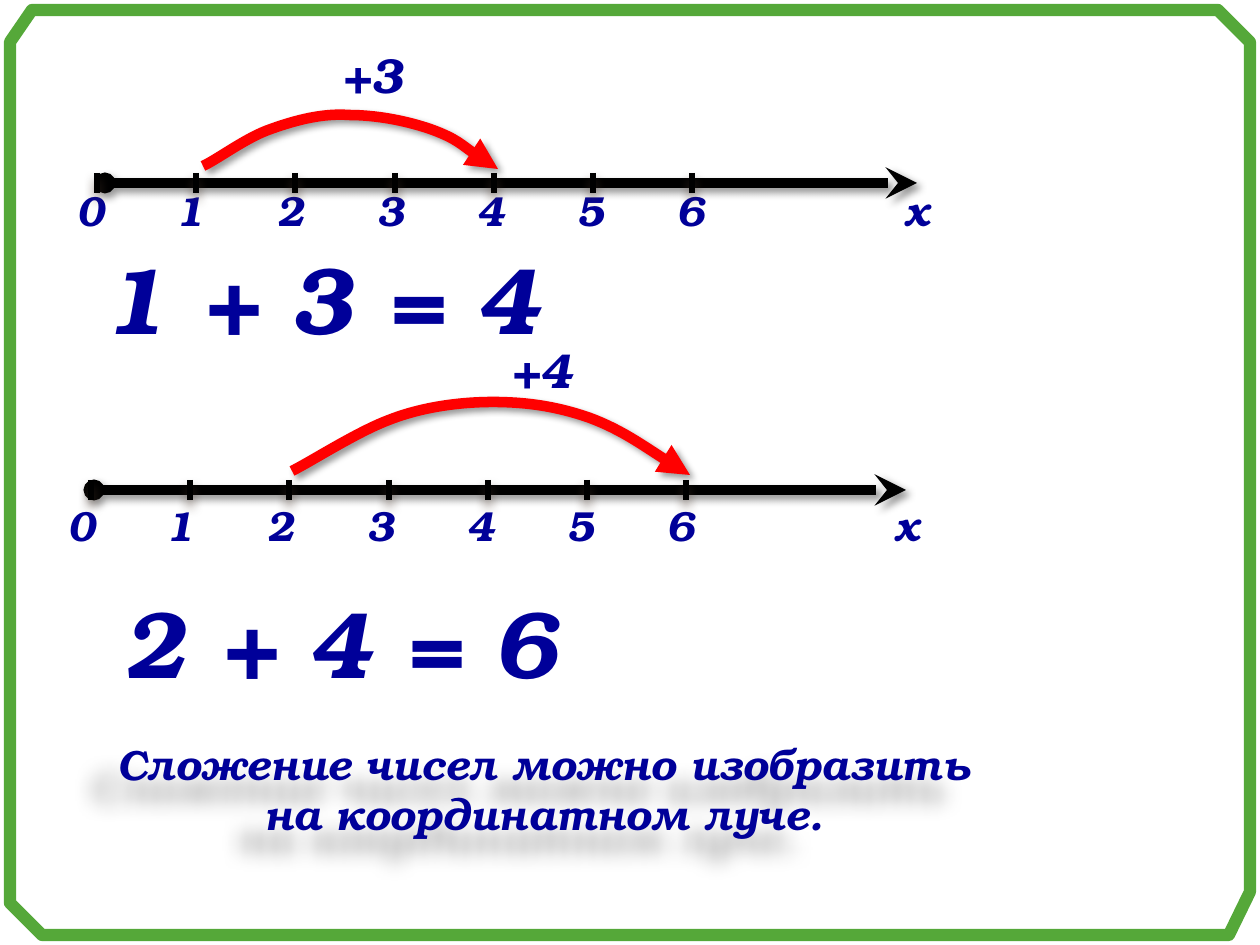
from lxml import etree
from pptx import Presentation
from pptx.dml.color import RGBColor
from pptx.enum.shapes import MSO_CONNECTOR, MSO_SHAPE
from pptx.enum.text import MSO_ANCHOR, PP_ALIGN
from pptx.oxml.ns import qn
from pptx.util import Inches, Pt

PX = 7257
STRAIGHT = MSO_CONNECTOR.STRAIGHT
CALLOUT = MSO_SHAPE.ROUNDED_RECTANGULAR_CALLOUT
LEFT, CENTER = PP_ALIGN.LEFT, PP_ALIGN.CENTER
MIDDLE = MSO_ANCHOR.MIDDLE
color = RGBColor.from_string
TEXT_FORMAT = {"name": "TeX Gyre Bonum", "bold": True, "italic": True}
SOFT = ("000000", 40, 4, 3, 45)
TICK = ("4E3B30", 60, 6, 4, 90)
SENTENCE = ("000000", 35, 12, 20, 139)
DOT = {"type": "oval", "w": "sm", "len": "sm"}
STEALTH = {"type": "stealth"}
TRIANGLE = {"type": "triangle"}


def write_text(box, text, size, align, wrap, tabs=()):
    frame = box.text_frame
    frame.word_wrap = wrap
    para = frame.paragraphs[0]
    para.alignment = align
    if tabs:
        tab_list = etree.SubElement(para._p.get_or_add_pPr(), qn("a:tabLst"))
        for stop in tabs:
            etree.SubElement(tab_list, qn("a:tab"), pos=str(stop * PX), algn="ctr")
    span = para.add_run()
    span.text = text
    span.font.size = Pt(size)
    span.font.color.rgb = color("000099")
    for name, value in TEXT_FORMAT.items():
        setattr(span.font, name, value)


def finish(shape, line=None, width=0, ends=None, shadow=None):
    if line:
        shape.line.color.rgb = color(line)
        shape.line.width = Pt(width)
        stroke = shape.line._get_or_add_ln()
        for end, look in (ends or {}).items():
            etree.SubElement(stroke, qn(f"a:{end}"), look)
    effects = etree.SubElement(shape._element.spPr, qn("a:effectLst"))
    if shadow:
        tint, alpha, blur, distance, angle = shadow
        outer = etree.SubElement(
            effects, qn("a:outerShdw"), blurRad=str(Pt(blur)), dist=str(Pt(distance)),
            dir=str(angle * 60000), algn="ctr", rotWithShape="0")
        shade = etree.SubElement(outer, qn("a:srgbClr"), val=tint)
        etree.SubElement(shade, qn("a:alpha"), val=str(alpha * 1000))


deck = Presentation()
deck.slide_width, deck.slide_height = Inches(10), Inches(7.5)
page = deck.slides.add_slide(deck.slide_layouts[6])
shapes = page.shapes

callout = shapes.add_shape(CALLOUT, 67 * PX, 725 * PX, 953 * PX, 128 * PX)
for index, value in enumerate((0.6, -2.48, 0.17)):
    callout.adjustments[index] = value
callout.fill.background()
callout.line.fill.background()
callout.text_frame.vertical_anchor = MIDDLE
write_text(callout, "Сложение чисел можно изобразить на координатном луче.", 24, CENTER, True)
finish(callout, shadow=SENTENCE)

rays = [
    {"start": 105, "y": 183, "tick": 97, "labels": (77, 185),
     "jump": ("+3", 329, 38), "sum": ("1 + 3 = 4", 52, 234),
     "arc": [(203, 166), (218, 159), (247, 137), (271, 129), (296, 120), (323, 113),
             (349, 115), (377, 115), (408, 121), (433, 130), (457, 139), (486, 163),
             (498, 169)]},
    {"start": 94, "y": 490, "tick": 91, "labels": (67, 500),
     "jump": ("+4", 498, 333), "sum": ("2 + 4 = 6", 70, 578),
     "arc": [(292, 471), (312, 461), (357, 432), (389, 420), (422, 407), (460, 402),
             (493, 402), (525, 402), (556, 406), (590, 418), (622, 430), (674, 466),
             (690, 475)]},
]

for ray in rays:
    left, top = ray["labels"]
    labels = shapes.add_textbox(left * PX, top * PX, 880 * PX, 50 * PX)
    for side in ("left", "top", "right", "bottom"):
        setattr(labels.text_frame, f"margin_{side}", 0)
    stops = [14 + 100 * number for number in range(1, 7)] + [841]
    write_text(labels, "\t".join("0123456х"), 24, LEFT, True, stops)

    start, y = ray["start"], ray["y"]
    axis = shapes.add_connector(STRAIGHT, start * PX, y * PX, (start + 812) * PX, y * PX)
    finish(axis, "000000", 6, {"headEnd": DOT, "tailEnd": STEALTH}, SOFT)
    for number in range(7):
        x = round(ray["tick"] + 99.2 * number) * PX
        tick = shapes.add_connector(STRAIGHT, x, (y - 10) * PX, x, (y + 10) * PX)
        finish(tick, "000000", 3, shadow=TICK)

    first, *others = ray["arc"]
    builder = shapes.build_freeform(*first, scale=PX)
    builder.add_line_segments(others, close=False)
    arc = builder.convert_to_shape()
    segments = list(arc._element.iter(qn("a:lnTo")))
    for index in range(0, len(segments), 3):
        curve = etree.Element(qn("a:cubicBezTo"))
        segments[index].addprevious(curve)
        for segment in segments[index:index + 3]:
            curve.append(segment[0])
            segment.getparent().remove(segment)
    arc.fill.background()
    finish(arc, "FF0000", 6, {"tailEnd": TRIANGLE}, SOFT)

    text, left, top = ray["jump"]
    jump = shapes.add_textbox(left * PX, top * PX, 90 * PX, 72 * PX)
    write_text(jump, text, 28, LEFT, False)
    text, left, top = ray["sum"]
    equation = shapes.add_textbox(left * PX, top * PX, 540 * PX, 92 * PX)
    write_text(equation, text, 54, CENTER, False)

builder = shapes.build_freeform(10, 42, scale=PX)
builder.add_line_segments([(10, 903), (42, 935), (1229, 935), (1250, 892),
                           (1250, 42), (1218, 10), (32, 10)])
border = builder.convert_to_shape()
border.fill.background()
finish(border, "55A839", 7)

deck.save("out.pptx")
